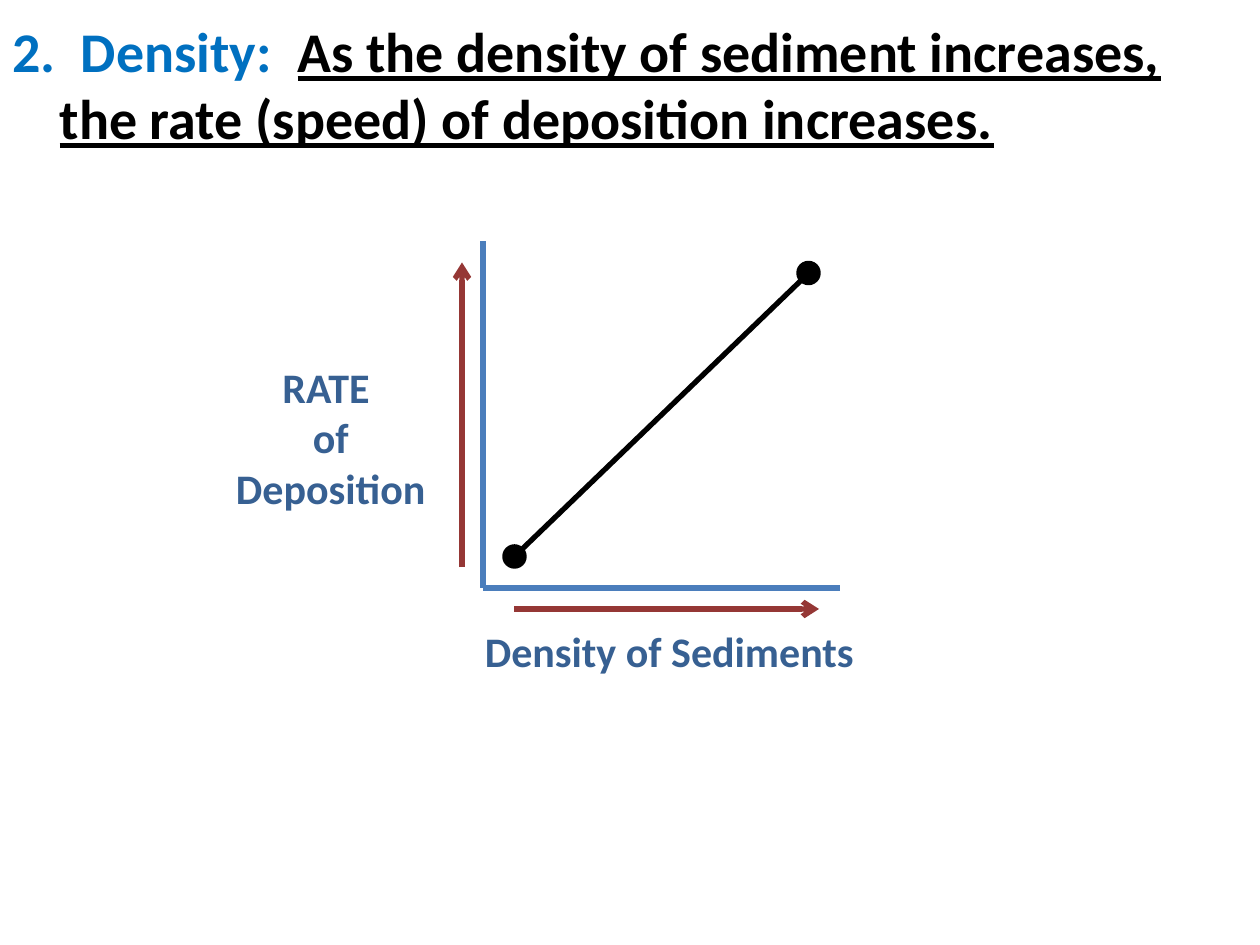
from lxml import etree
from pptx import Presentation
from pptx.dml.color import RGBColor
from pptx.enum import shapes as sh, text as tx
from pptx.oxml.ns import qn
from pptx.util import Pt

FONT = "Calibri"
BLACK, BLUE, NAVY, AXIS, RED = "000000", "0070C0", "376092", "4B7EBC", "953735"


def color(code):
    return RGBColor.from_string(code)


def style(font, size, code):
    font.name, font.size, font.bold = FONT, Pt(size), True
    font.color.rgb = color(code)


def add_text(slide, x, y, w, h):
    frame = slide.shapes.add_textbox(Pt(x), Pt(y), Pt(w), Pt(h)).text_frame
    frame.word_wrap = True
    return frame


def add_line(slide, start, end, code, arrow=False):
    line = slide.shapes.add_connector(
        sh.MSO_CONNECTOR.STRAIGHT, *[Pt(v) for v in (*start, *end)])
    line.line.color.rgb = color(code)
    line.line.width = Pt(3)
    if arrow:
        etree.SubElement(line.line._get_or_add_ln(), qn("a:tailEnd"), type="arrow")
    etree.SubElement(line._element.spPr, qn("a:effectLst"))


def add_dot(slide, x, y, size=12):
    """Draw a dot centred on x, y."""
    dot = slide.shapes.add_shape(sh.MSO_SHAPE.OVAL, Pt(x - size / 2),
                                 Pt(y - size / 2), Pt(size), Pt(size))
    dot.shadow.inherit = False
    dot.fill.solid()
    dot.fill.fore_color.rgb = color(BLACK)
    dot.line.color.rgb = color(BLACK)
    dot.line.width = Pt(2)


def add_label(slide, lines, box, align):
    frame = add_text(slide, *box)
    frame.text = "\n".join(lines)
    for para in frame.paragraphs:
        para.alignment = align
        style(para.font, 24, NAVY)


def add_rule(slide, x, y, w, h):
    para = add_text(slide, x, y, w, h).paragraphs[0]
    props = para._p.get_or_add_pPr()
    props.set("marL", str(Pt(27)))
    props.set("indent", str(Pt(-27)))
    style(para.font, 32, BLACK)
    head = para.add_run()
    head.text = "2.  Density:  "
    head.font.color.rgb = color(BLUE)
    body = para.add_run()
    body.text = ("As the density of sediment increases, "
                 "the rate (speed) of deposition increases.")
    body.font.underline = True


def add_graph(slide, x, y, w, h):
    """Draw the graph; the box is the area between the axes."""
    base, right = y + h, x + w
    low, high = (x + 18, base - 18), (right - 18, y + 18)

    add_line(slide, (x, y), (x, base), AXIS)
    add_line(slide, (right, base), (x, base), AXIS)
    add_label(slide, ["Density of Sediments"], (x - 6, base + 18, 252, 36),
              tx.PP_ALIGN.LEFT)
    add_line(slide, (x + 18, base + 12), (right - 12, base + 12), RED, True)
    add_line(slide, (x - 12, base - 12), (x - 12, y + 12), RED, True)
    add_label(slide, ["RATE ", "of", "Deposition"], (x - 162, y + 65, 150, 94),
              tx.PP_ALIGN.CENTER)
    add_dot(slide, *low)
    add_dot(slide, *high)
    add_line(slide, low, (high[0] - 4, high[1] + 4), BLACK)


def main():
    deck = Presentation()
    deck.slide_width, deck.slide_height = Pt(720), Pt(540)
    slide = deck.slides.add_slide(deck.slide_layouts[6])
    add_rule(slide, 0, 6, 720, 452)
    add_graph(slide, 276, 138, 204, 198)
    deck.save("out.pptx")


if __name__ == "__main__":
    main()
